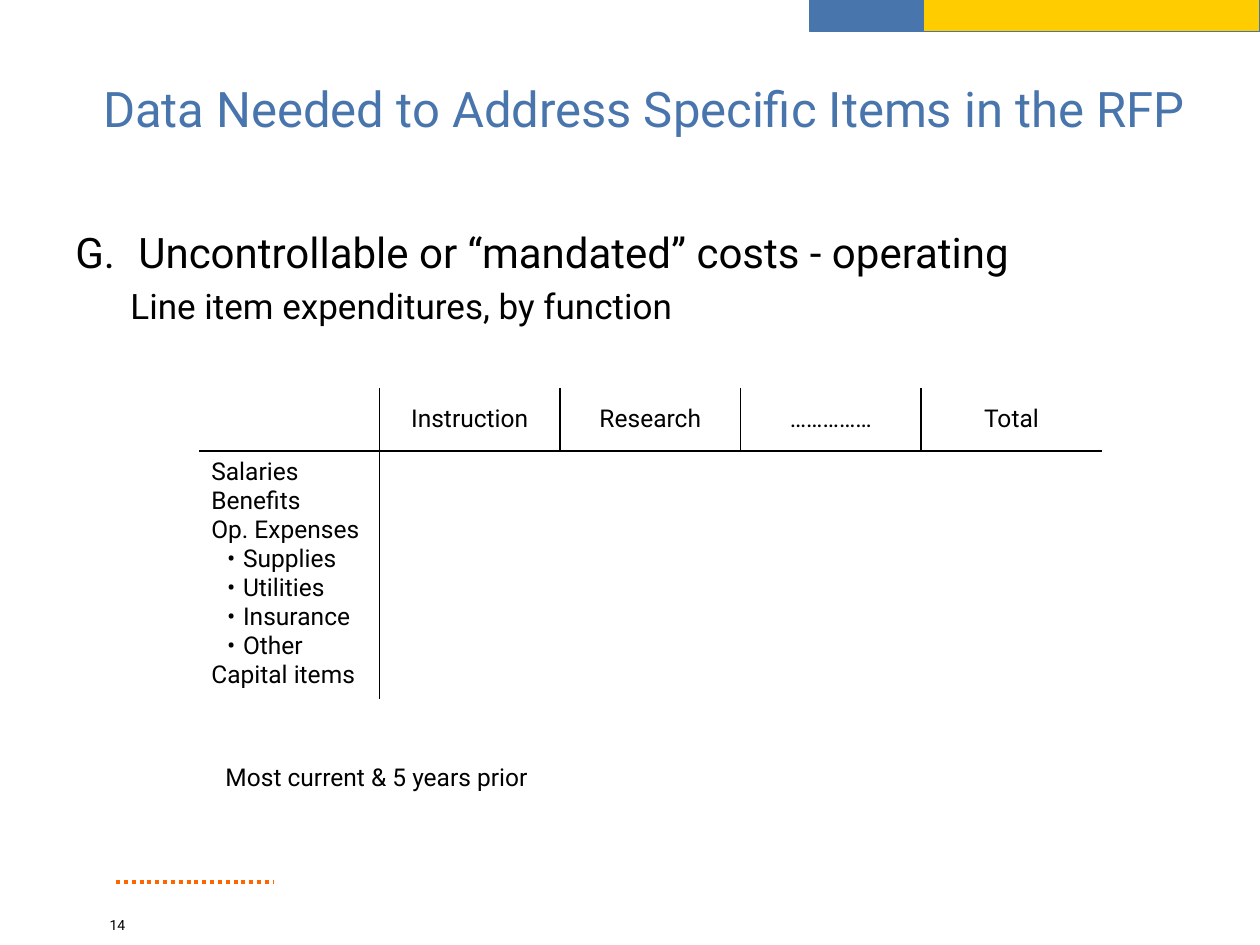
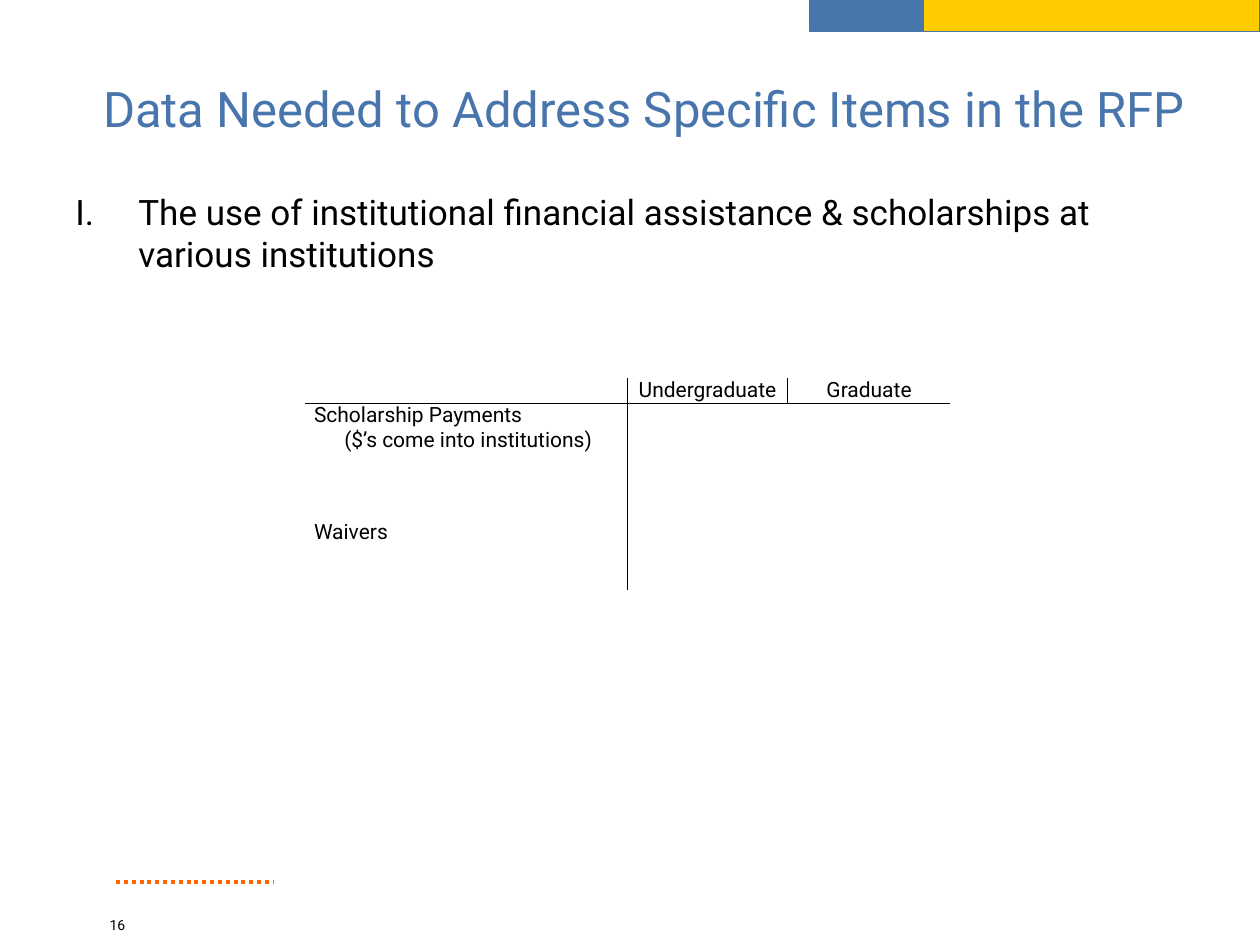
from collections import namedtuple

from lxml.etree import SubElement
from pptx import Presentation
from pptx.dml.color import RGBColor
from pptx.enum.dml import MSO_LINE_DASH_STYLE as DASH
from pptx.enum.shapes import MSO_CONNECTOR as CONNECTOR
from pptx.enum.shapes import MSO_SHAPE as SHAPE
from pptx.enum.text import MSO_ANCHOR as ANCHOR
from pptx.enum.text import PP_ALIGN as ALIGN
from pptx.oxml.ns import qn
from pptx.util import Cm, Pt

COLORS = {
    "blue": "4975AD",
    "yellow": "FFCC00",
    "orange": "FF6600",
    "text": "000000",
}
FONT = "Roboto"
TITLE = "Data Needed to Address Specific Items in the RFP"
BORDER_WIDTH = Pt(1)

Box = namedtuple("Box", "left top width height")

TITLE_BOX = Box(1.27, 0.76, 22.86, 2.84)
BAND_BOX = Box(16.33, -0.03, 9.07, 0.66)
FOOTER_BOX = Box(1.96, 17.78, 3.55, 1.27)


def rgb(name):
    return RGBColor.from_string(COLORS[name])


def in_cm(box):
    return [Cm(length) for length in box]


def style_paragraph(paragraph, size, color="text", align=ALIGN.LEFT):
    paragraph.alignment = align
    for run in paragraph.runs:
        run.font.name = FONT
        run.font.size = Pt(size)
        run.font.color.rgb = rgb(color)


def set_indent(paragraph, margin, first_line=0):
    properties = paragraph._p.get_or_add_pPr()
    properties.set("marL", str(Cm(margin)))
    properties.set("indent", str(Cm(first_line)))
    return properties


def add_text(slide, box, text, size, color="text", align=ALIGN.LEFT,
             anchor=ANCHOR.TOP, wrap=True):
    text_frame = slide.shapes.add_textbox(*in_cm(box)).text_frame
    text_frame.word_wrap = wrap
    text_frame.vertical_anchor = anchor
    text_frame.text = text
    style_paragraph(text_frame.paragraphs[0], size, color, align)
    return text_frame


def add_bands(slide, box):
    blue_width = 2.29
    bands = [
        ("blue", box.left, blue_width),
        ("yellow", box.left + blue_width, box.width - blue_width),
    ]
    for color, left, width in bands:
        band = slide.shapes.add_shape(
            SHAPE.RECTANGLE, *in_cm((left, box.top, width, box.height)))
        band.shadow.inherit = False
        band.fill.solid()
        band.fill.fore_color.rgb = rgb(color)
        band.line.color.rgb = rgb("blue")
        band.line.width = Pt(0.75)


def add_footer(slide, box, number):
    rule = slide.shapes.add_connector(
        CONNECTOR.STRAIGHT, Cm(box.left + 0.38), Cm(box.top),
        Cm(box.left + box.width), Cm(box.top))
    rule.line.color.rgb = rgb("orange")
    rule.line.width = Pt(2.25)
    rule.line.dash_style = DASH.ROUND_DOT
    SubElement(rule._element.spPr, qn("a:effectLst"))
    add_text(slide, Box(box.left, box.top + 0.58, 2.54, 0.69), number, 8)


def add_slide(presentation, number):
    slide = presentation.slides.add_slide(presentation.slide_layouts[6])
    add_footer(slide, FOOTER_BOX, number)
    add_bands(slide, BAND_BOX)
    add_text(slide, TITLE_BOX, TITLE, 28, "blue", ALIGN.RIGHT, ANCHOR.MIDDLE)
    return slide


def add_lettered_item(slide, box, text, size, letter, detail=None):
    text_frame = add_text(slide, box, text, size)
    properties = set_indent(text_frame.paragraphs[0], 1.27, -1.27)
    SubElement(properties, qn("a:buFont"), typeface=FONT)
    SubElement(properties, qn("a:buAutoNum"), type="alphaUcPeriod",
               startAt=str(ord(letter) - ord("A") + 1))
    if detail:
        paragraph = text_frame.add_paragraph()
        paragraph.text = detail
        paragraph.level = 1
        paragraph.space_before = Pt(4)
        set_indent(paragraph, 1.11)
        style_paragraph(paragraph, 20)


def set_borders(cell, visible_sides):
    properties = cell._tc.get_or_add_tcPr()
    for position, side in enumerate("LRTB"):
        line = SubElement(properties, qn(f"a:ln{side}"), w=str(BORDER_WIDTH))
        properties.insert(position, line)
        if side in visible_sides:
            fill = SubElement(line, qn("a:solidFill"))
            SubElement(fill, qn("a:srgbClr"), val=COLORS["text"])
        else:
            SubElement(line, qn("a:noFill"))


def visible_borders(row, column, last_column):
    sides = "B" if row == 0 else "T"
    if column == 1 or (row == 0 and column > 0):
        sides += "L"
    if column == 0 or (row == 0 and column < last_column):
        sides += "R"
    return sides


def add_open_table(slide, left, top, widths, heights, headers, row_labels,
                   size, side_margin, end_margin):
    table = slide.shapes.add_table(
        2, len(widths),
        *in_cm((left, top, sum(widths), sum(heights)))).table
    table.first_row = False
    table.horz_banding = False
    for column, width in zip(table.columns, widths):
        column.width = Cm(width)
    for row, height in zip(table.rows, heights):
        row.height = Cm(height)

    last_column = len(widths) - 1
    for row in range(2):
        for column in range(len(widths)):
            cell = table.cell(row, column)
            cell.fill.background()
            cell.margin_left = cell.margin_right = Cm(side_margin)
            cell.margin_top = cell.margin_bottom = Cm(end_margin)
            set_borders(cell, visible_borders(row, column, last_column))
            if row == 0 and column > 0:
                cell.vertical_anchor = ANCHOR.MIDDLE
                cell.text_frame.text = headers[column - 1]
                style_paragraph(cell.text_frame.paragraphs[0], size,
                                align=ALIGN.CENTER)
            elif row == 1 and column == 0:
                cell.text_frame.text = "\n".join(row_labels)
                for paragraph in cell.text_frame.paragraphs:
                    style_paragraph(paragraph, size)
            else:
                SubElement(cell.text_frame.paragraphs[0]._p,
                           qn("a:endParaRPr"), sz=str(size * 100))
    return table.cell(1, 0).text_frame.paragraphs


def add_expenditure_table(slide, left, top):
    operating = ["Supplies", "Utilities", "Insurance", "Other"]
    labels = ["Salaries", "Benefits", "Op. Expenses", *operating,
              "Capital items"]
    paragraphs = add_open_table(
        slide, left, top, [3.64] * 5, [1.27, 4.9],
        ["Instruction", "Research", "……………", "Total"], labels,
        14, 0.25, 0.13)
    for paragraph in paragraphs:
        if paragraph.text in operating:
            properties = set_indent(paragraph, 0.64, -0.32)
            SubElement(properties, qn("a:buFont"), typeface=FONT)
            SubElement(properties, qn("a:buChar"), char="•")


def add_assistance_table(slide, left, top):
    payments, waivers = add_open_table(
        slide, left, top, [6.5, 3.23, 3.28], [0.48, 3.76],
        ["Undergraduate", "Graduate"],
        ["Scholarship Payments\v\t($’s come into institutions)", "Waivers"],
        12, 0.18, 0)
    tabs = SubElement(payments._p.get_or_add_pPr(), qn("a:tabLst"))
    SubElement(tabs, qn("a:tab"), pos=str(Cm(0.61)), algn="l")
    waivers.space_before = Pt(38.5)


def build_costs_slide(presentation):
    slide = add_slide(presentation, "14")
    add_lettered_item(
        slide, Box(1.27, 4.45, 22.86, 2.74),
        "Uncontrollable or “mandated” costs - operating", 24, "G",
        "Line item expenditures, by function")
    add_expenditure_table(slide, 4.01, 7.82)
    add_text(slide, Box(4.24, 15.24, 6.71, 0.86),
             "Most current & 5 years prior", 14, align=ALIGN.CENTER,
             wrap=False)


def build_assistance_slide(presentation):
    slide = add_slide(presentation, "16")
    add_lettered_item(
        slide, Box(1.27, 3.71, 22.86, 8.56),
        "The use of institutional financial assistance & scholarships at "
        "various institutions", 20, "I")
    add_assistance_table(slide, 6.15, 7.62)


def main():
    presentation = Presentation()
    presentation.slide_width = Cm(25.4)
    presentation.slide_height = Cm(19.05)
    build_costs_slide(presentation)
    build_assistance_slide(presentation)
    presentation.save("out.pptx")


if __name__ == "__main__":
    main()
